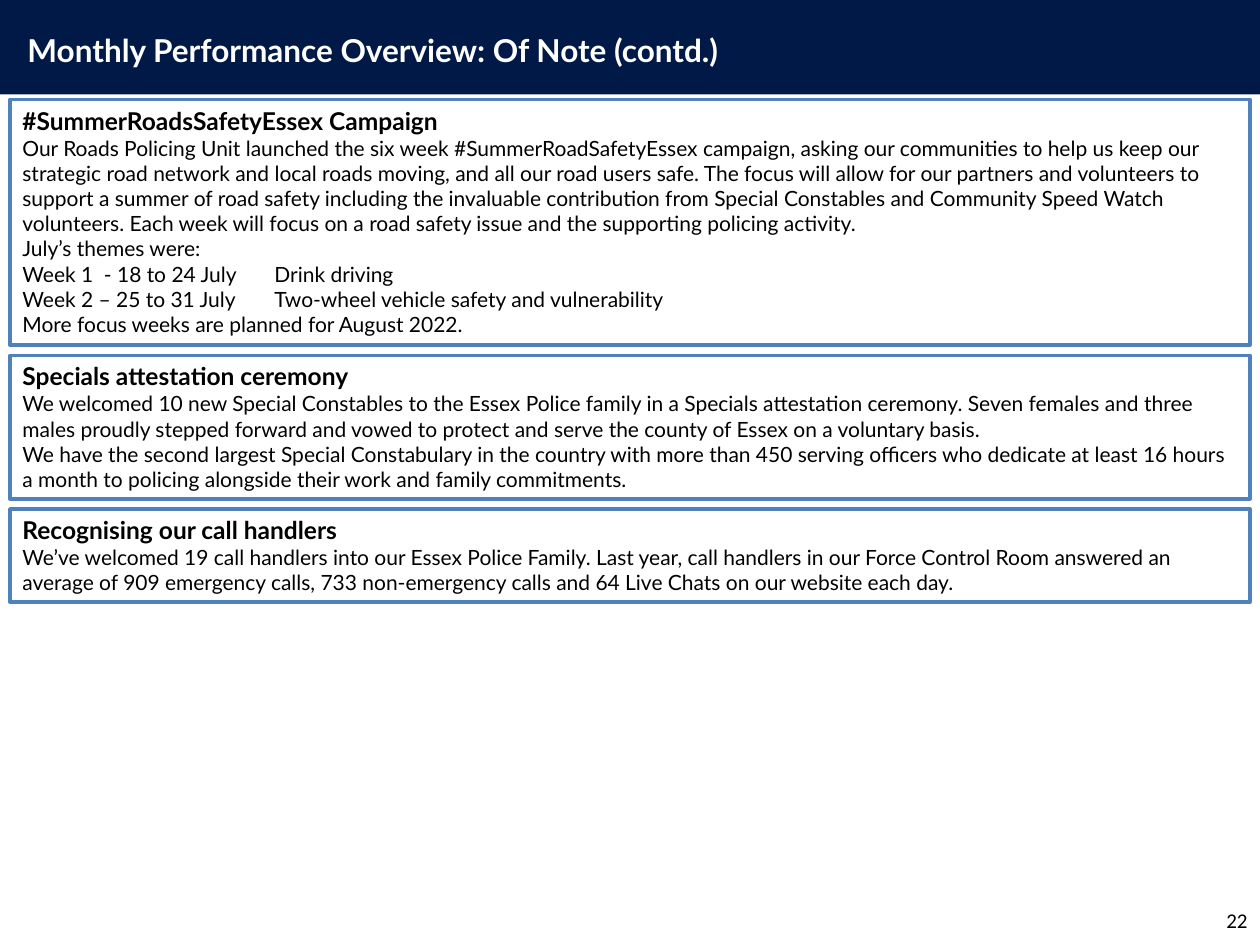
from pptx import Presentation
from pptx import util as u
from pptx.dml.color import RGBColor
from pptx.enum import shapes, text

NAVY = RGBColor(0x00, 0x19, 0x47)
BLUE = RGBColor(0x4F, 0x81, 0xBD)
WHITE = RGBColor(0xFF, 0xFF, 0xFF)
BLACK = RGBColor(0, 0, 0)

# Each panel: height in inches, heading, body paragraphs
PANELS = [
    (1.95, "#SummerRoadsSafetyEssex Campaign", [
        "Our Roads Policing Unit launched the six week #SummerRoadSafetyEssex "
        "campaign, asking our communities to help us keep our strategic road "
        "network and local roads moving, and all our road users safe. The focus "
        "will allow for our partners and volunteers to support a summer of road "
        "safety including the invaluable contribution from Special Constables "
        "and Community Speed Watch volunteers. Each week will focus on a road "
        "safety issue and the supporting policing activity.",
        "July’s themes were:",
        "Week 1  - 18 to 24 July\tDrink driving",
        "Week 2 – 25 to 31 July\tTwo-wheel vehicle safety and vulnerability",
        "More focus weeks are planned for August 2022.",
    ]),
    (1.14, "Specials attestation ceremony", [
        "We welcomed 10 new Special Constables to the Essex Police family in a "
        "Specials attestation ceremony. Seven females and three males proudly "
        "stepped forward and vowed to protect and serve the county of Essex on "
        "a voluntary basis.",
        "We have the second largest Special Constabulary in the country with "
        "more than 450 serving officers who dedicate at least 16 hours a month "
        "to policing alongside their work and family commitments.",
    ]),
    (0.74, "Recognising our call handlers", [
        "We’ve welcomed 19 call handlers into our Essex Police Family. Last "
        "year, call handlers in our Force Control Room answered an average of "
        "909 emergency calls, 733 non-emergency calls and 64 Live Chats on our "
        "website each day.",
    ]),
]


class Page:
    font = "Lato"

    def __init__(self, slide):
        self.slide = slide

    def style(self, para, size, color=BLACK, bold=False, font=None):
        for run in para.runs:
            run.font.name = font or self.font
            run.font.size = u.Pt(size)
            run.font.bold = bold
            run.font.color.rgb = color

    def rect(self, x, y, w, h, fill, line=None):
        box = self.slide.shapes.add_shape(
            shapes.MSO_SHAPE.RECTANGLE, *map(u.Inches, (x, y, w, h)))
        box.shadow.inherit = False
        box.fill.solid()
        box.fill.fore_color.rgb = fill
        if line is None:
            box.line.fill.background()
        else:
            box.line.color.rgb = line
            box.line.width = u.Pt(2)
        return box

    def label(self, x, y, w, h, words, size, **look):
        box = self.slide.shapes.add_textbox(*map(u.Inches, (x, y, w, h)))
        frame = box.text_frame
        frame.word_wrap = True
        frame.text = words
        self.style(frame.paragraphs[0], size, **look)
        return frame

    def panel(self, y, h, head, body):
        frame = self.rect(0.08, y, 9.84, h, WHITE, BLUE).text_frame
        frame.word_wrap = True
        frame.vertical_anchor = text.MSO_ANCHOR.TOP
        frame.text = "\n".join([head, *body])
        for i, para in enumerate(frame.paragraphs):
            para.alignment = text.PP_ALIGN.LEFT
            self.style(para, 12 if i else 14, bold=i == 0)


def main():
    deck = Presentation()
    deck.slide_width, deck.slide_height = u.Inches(10), u.Inches(7.5)
    page = Page(deck.slides.add_slide(deck.slide_layouts[6]))

    # Title band
    page.rect(0, 0, 10, 0.75, NAVY)
    page.label(0.12, 0.2, 6.06, 0.4,
               "Monthly Performance Overview: Of Note (contd.)", 18,
               color=WHITE, bold=True)

    # Page number
    num = page.label(7.67, 7.1, 2.33, 0.4, "22", 12, font="Calibri")
    num.vertical_anchor = text.MSO_ANCHOR.MIDDLE
    num.paragraphs[0].alignment = text.PP_ALIGN.RIGHT

    # Stacked news panels
    top, gap = 0.79, 0.08
    for high, head, body in PANELS:
        page.panel(top, high, head, body)
        top += high + gap

    deck.save("out.pptx")


if __name__ == "__main__":
    main()
